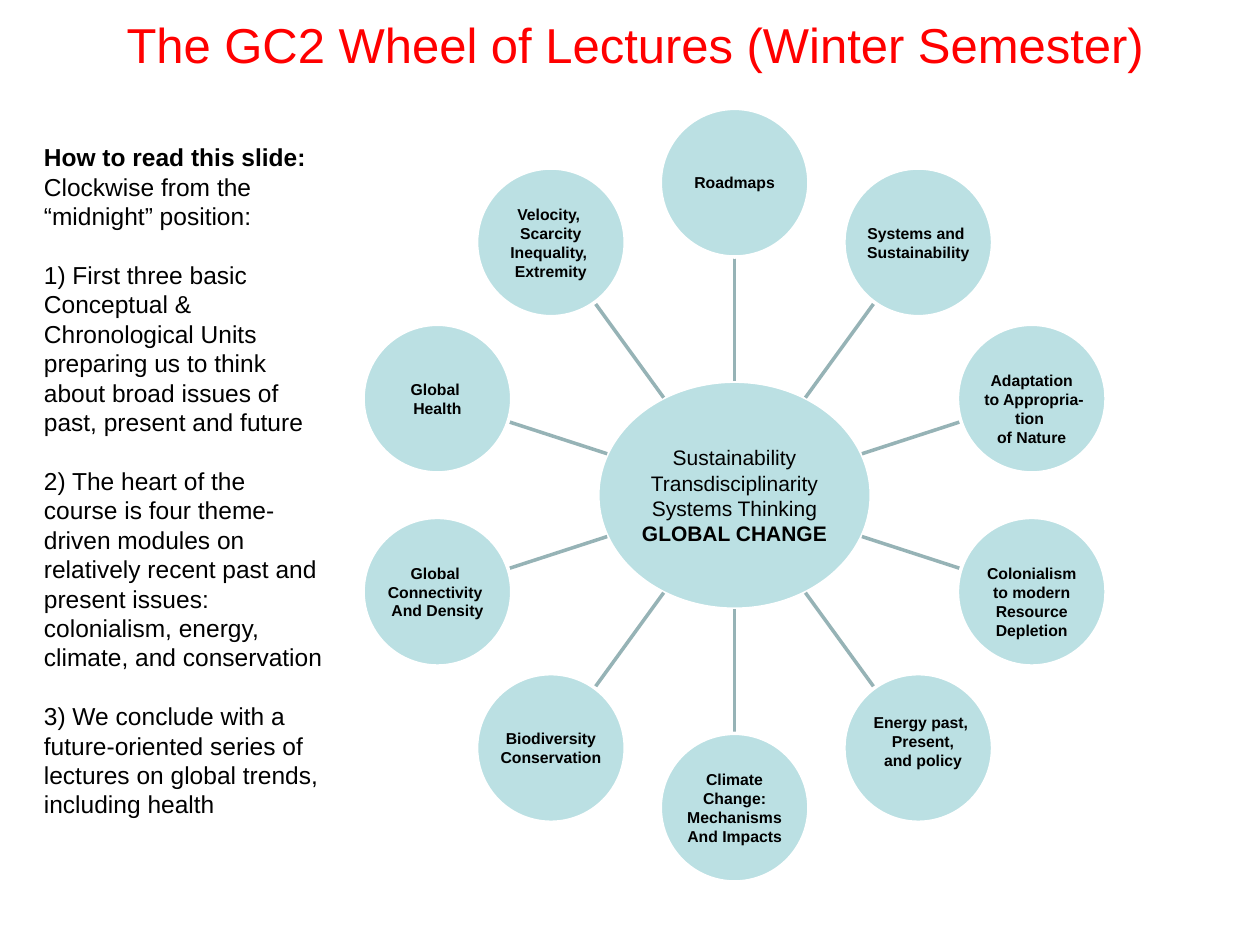
from math import cos, hypot, radians, sin

from lxml import etree
from pptx import Presentation
from pptx.dml.color import RGBColor
from pptx.enum.shapes import MSO_CONNECTOR, MSO_SHAPE
from pptx.enum.text import MSO_ANCHOR, PP_ALIGN
from pptx.oxml.ns import qn
from pptx.util import Inches, Pt

LEFT, CENTER = PP_ALIGN.LEFT, PP_ALIGN.CENTER
TOP, MIDDLE = MSO_ANCHOR.TOP, MSO_ANCHOR.MIDDLE
OVAL, STRAIGHT = MSO_SHAPE.OVAL, MSO_CONNECTOR.STRAIGHT

COLORS = {"title": "FF0000", "text": "000000", "disc": "BBE0E3",
          "edge": "FFFFFF", "spoke": "96B3B6"}

HUB_X, HUB_Y, HUB_W, HUB_H = 5.83, 3.93, 2.17, 1.81
RING, NODE, LABEL = 2.48, 1.18, 0.86
INSET = 0.01

HUB = ["Sustainability", "Transdisciplinarity", "Systems Thinking", [("GLOBAL CHANGE", True)]]

LECTURES = [
    (["Roadmaps"], 0),
    (["Systems and ", "Sustainability "], 0),
    (["Adaptation", " to Appropria-tion ", "of Nature"], 0.08),
    (["Colonialism to modern", "Resource Depletion"], 0.08),
    ([], 0),
    (["Climate", "Change:", "Mechanisms", "And Impacts"], 0),
    (["Biodiversity", "Conservation"], 0),
    (["Global ", "Connectivity ", "And Density"], 0),
    (["Global ", "Health"], 0),
    (["Velocity, ", "Scarcity", "Inequality, ", "Extremity"], 0),
]

ENERGY = ["Energy past, ", "Present,", "and policy"]

GUIDE = [
    [("How to read this slide: ", True), ("Clockwise from the “midnight” position:", False)],
    "1) First three basic Conceptual & Chronological Units preparing us to think "
    "about broad issues of past, present and future",
    "2) The heart of the course is four theme-driven modules on relatively recent "
    "past and present issues: colonialism, energy, climate, and conservation",
    "3) We conclude with a future-oriented series of lectures on global trends, "
    "including health",
]


def color(name):
    """Return the named palette color."""
    return RGBColor.from_string(COLORS[name])


def add_text(slide, box, lines, size=9, bold=False, ink="text", align=CENTER,
             anchor=MIDDLE, inset=None, gap=0):
    """Add a text box; a line is a string or a list of (words, bold) runs."""
    frame = slide.shapes.add_textbox(*map(Inches, box)).text_frame
    frame.word_wrap = True
    frame.vertical_anchor = anchor
    if inset is not None:
        frame.margin_left = frame.margin_right = Inches(inset)
        frame.margin_top = frame.margin_bottom = Inches(inset)
    for i, line in enumerate(lines):
        para = frame.add_paragraph() if i else frame.paragraphs[0]
        para.alignment = align
        if i:
            para.space_before = Pt(gap)
        for words, strong in [(line, bold)] if isinstance(line, str) else line:
            run = para.add_run()
            run.text = words
            run.font.name = "Arial"
            run.font.size = Pt(size)
            run.font.bold = strong
            run.font.color.rgb = color(ink)


def around(x, y, width, height):
    """Return the box of the given size centered on a point."""
    return x - width / 2, y - height / 2, width, height


def add_disc(slide, box):
    """Add a filled oval with a white edge."""
    disc = slide.shapes.add_shape(OVAL, *map(Inches, box))
    disc.shadow.inherit = False
    disc.fill.solid()
    disc.fill.fore_color.rgb = color("disc")
    disc.line.color.rgb = color("edge")
    disc.line.width = Pt(2)


def add_spoke(slide, start, end):
    """Add a straight line between two points."""
    spoke = slide.shapes.add_connector(STRAIGHT, *map(Inches, start + end))
    spoke.line.color.rgb = color("spoke")
    spoke.line.width = Pt(2)
    etree.SubElement(spoke.element.spPr, qn("a:effectLst"))


def add_wheel(slide):
    """Add the hub and the ring of lectures, clockwise from the top."""
    add_disc(slide, around(HUB_X, HUB_Y, HUB_W, HUB_H))
    add_text(slide, around(HUB_X, HUB_Y, 1.53, 1.28), HUB, size=12, inset=INSET)
    for i, (lines, drop) in enumerate(LECTURES):
        angle = radians(360 / len(LECTURES) * i)
        dx, dy = sin(angle), -cos(angle)
        rim = 1 / hypot(dx / (HUB_W / 2), dy / (HUB_H / 2))
        start, end, mid = [(HUB_X + r * dx, HUB_Y + r * dy)
                           for r in (rim, RING - NODE / 2, RING)]
        add_spoke(slide, start, end)
        add_disc(slide, around(*mid, NODE, NODE))
        if lines:
            add_text(slide, around(mid[0], mid[1] + drop, LABEL, LABEL), lines,
                     bold=True, inset=INSET)


def main():
    """Build and save the slide."""
    deck = Presentation()
    deck.slide_width, deck.slide_height = Inches(10), Inches(7.5)
    slide = deck.slides.add_slide(deck.slide_layouts[6])
    add_text(slide, (0.5, 0, 9.08, 0.7), ["The GC2 Wheel of Lectures (Winter Semester)"],
             size=28, ink="title")
    add_wheel(slide)
    add_text(slide, (0.25, 1.08, 2.42, 5.52), GUIDE, size=14, align=LEFT, anchor=TOP, gap=16.8)
    add_text(slide, (6.4, 5.61, 1.85, 0.56), ENERGY, bold=True, anchor=TOP)
    deck.save("out.pptx")


if __name__ == "__main__":
    main()
